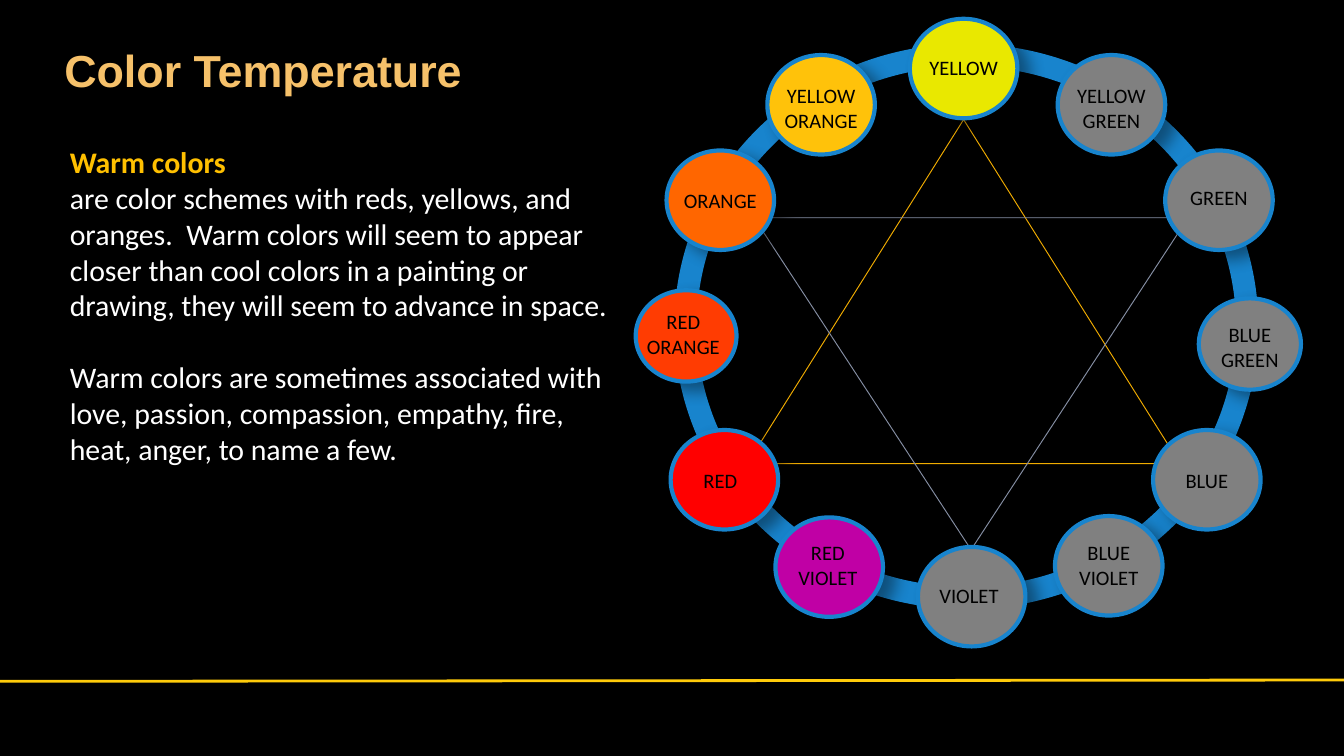
from dataclasses import dataclass

import pptx
import pptx.dml.color
import pptx.enum.shapes
import pptx.enum.text
import pptx.oxml
import pptx.oxml.ns
import pptx.util
from pptx.util import Inches

SHAPES = pptx.enum.shapes.MSO_SHAPE
RING_BLUE, GOLD, GRAY = "1884CD", "FFC000", "808080"
LABEL_WIDTH = 0.84
BODY_FORMAT = {"name": "Calibri", "size": pptx.util.Pt(16), "bold": False}
LABEL_FORMAT = {"name": "Calibri", "size": pptx.util.Pt(11)}
TITLE_FORMAT = {"name": "Arial", "size": pptx.util.Pt(24), "bold": True}


@dataclass
class Disc:
    label: str
    left: float
    top: float
    fill: str
    label_top: float
    width: float = 0.8
    height: float = 0.74
    label_shift: float = 0


@dataclass
class Triangle:
    left: float
    top: float
    width: float
    height: float
    color: str
    rotation: int = 0


@dataclass
class BodyParagraph:
    text: str
    color: str = "FFFFFF"
    bold: bool = False
    space_before: float = 0


DISCS = [
    Disc("YELLOW", 6.77, 0.14, "E9E800", 0.36),
    Disc("YELLOW GREEN", 7.87, 0.41, GRAY, 0.57),
    Disc("GREEN", 8.67, 1.12, GRAY, 1.33),
    Disc("BLUE GREEN", 8.92, 2.22, GRAY, 2.35, 0.76, 0.68),
    Disc("BLUE", 8.58, 3.2, GRAY, 3.43),
    Disc("BLUE VIOLET", 7.85, 3.84, GRAY, 3.97),
    Disc("VIOLET", 6.83, 4.07, GRAY, 4.29, label_shift=-0.02),
    Disc("RED VIOLET", 5.77, 3.85, "C000A5", 3.97, label_shift=-0.01),
    Disc("RED", 4.99, 3.2, "FF0000", 3.43, label_shift=-0.03),
    Disc("RED ORANGE", 4.73, 2.16, "FF3C02", 2.25, 0.75, 0.68, -0.02),
    Disc("ORANGE", 4.96, 1.12, "FF6600", 1.35),
    Disc("YELLOW ORANGE", 5.71, 0.41, "FFC20A", 0.57),
]
TRIANGLES = [
    Triangle(5.56, 0.89, 3.22, 2.56, "F0AC00"),
    Triangle(5.61, 1.62, 3.23, 2.47, "858EA3", 180),
]
BODY = [
    BodyParagraph("Warm colors", GOLD, True),
    BodyParagraph(
        "are color schemes with reds, yellows, and oranges.  Warm colors will seem to "
        "appear closer than cool colors in a painting or drawing, they will seem to "
        "advance in space."
    ),
    BodyParagraph(
        "Warm colors are sometimes associated with love, passion, compassion, empathy, fire,",
        space_before=19.2,
    ),
    BodyParagraph("heat, anger, to name a few."),
]


def rgb(color: str) -> pptx.dml.color.RGBColor:
    return pptx.dml.color.RGBColor.from_string(color)


def format_font(font, color: str, values: dict) -> None:
    for name, value in values.items():
        setattr(font, name, value)
    font.color.rgb = rgb(color)


def add_outline(slide, kind, left, top, width, height, color, weight):
    """Add a preset shape that has a line but no fill or shadow."""
    shape = slide.shapes.add_shape(
        kind, Inches(left), Inches(top), Inches(width), Inches(height)
    )
    shape.shadow.inherit = False
    shape.fill.background()
    shape.line.color.rgb = rgb(color)
    shape.line.width = pptx.util.Pt(weight)
    return shape


def add_text_frame(slide, left, top, width, height):
    box = slide.shapes.add_textbox(
        Inches(left), Inches(top), Inches(width), Inches(height)
    )
    box.text_frame.word_wrap = True
    return box.text_frame


def add_drop_shadow(shape) -> None:
    """Put a soft black shadow to the lower right of the shape."""
    effects = shape._element.spPr.find(pptx.oxml.ns.qn("a:effectLst"))
    effects.append(pptx.oxml.parse_xml(
        f'<a:outerShdw {pptx.oxml.ns.nsdecls("a")} blurRad="{pptx.util.Pt(8.8)}" '
        f'dist="{pptx.util.Pt(7)}" dir="{35 * 60000}" algn="tl" rotWithShape="0">'
        '<a:srgbClr val="000000"><a:alpha val="40000"/></a:srgbClr></a:outerShdw>'
    ))


def add_disc(slide, disc: Disc) -> None:
    shape = add_outline(slide, SHAPES.OVAL, disc.left, disc.top,
                        disc.width, disc.height, RING_BLUE, 2.25)
    shape.fill.solid()
    shape.fill.fore_color.rgb = rgb(disc.fill)
    add_drop_shadow(shape)

    label_left = disc.left + (disc.width - LABEL_WIDTH) / 2 + disc.label_shift
    label_height = 0.47 if " " in disc.label else 0.29
    frame = add_text_frame(slide, label_left, disc.label_top, LABEL_WIDTH, label_height)
    paragraph = frame.paragraphs[0]
    paragraph.text = disc.label
    paragraph.alignment = pptx.enum.text.PP_ALIGN.CENTER
    format_font(paragraph.font, "000000", LABEL_FORMAT)


def add_triangle(slide, triangle: Triangle) -> None:
    shape = add_outline(slide, SHAPES.FLOWCHART_EXTRACT, triangle.left, triangle.top,
                        triangle.width, triangle.height, triangle.color, 0.5)
    shape.rotation = triangle.rotation


def add_footer_line(slide) -> None:
    line = slide.shapes.add_connector(
        pptx.enum.shapes.MSO_CONNECTOR.STRAIGHT,
        Inches(0), Inches(5.07), Inches(10), Inches(5.06),
    )
    line.line.color.rgb = rgb("FFCB0A")
    line.line.width = pptx.util.Pt(1.5)
    line._element.spPr.append(pptx.oxml.parse_xml(
        f'<a:effectLst {pptx.oxml.ns.nsdecls("a")}/>'
    ))


def add_title(slide) -> None:
    paragraph = add_text_frame(slide, 0.38, 0.27, 3.68, 0.5).paragraphs[0]
    paragraph.text = "Color Temperature"
    format_font(paragraph.font, "F6C16A", TITLE_FORMAT)


def add_body(slide) -> None:
    frame = add_text_frame(slide, 0.29, 1.02, 4.43, 2.79)
    frame.margin_left = Inches(0.23)
    for index, item in enumerate(BODY):
        paragraph = frame.add_paragraph() if index else frame.paragraphs[0]
        paragraph.text = item.text
        if item.space_before:
            paragraph.space_before = pptx.util.Pt(item.space_before)
        format_font(paragraph.font, item.color, BODY_FORMAT | {"bold": item.bold})


def main() -> None:
    presentation = pptx.Presentation()
    presentation.slide_width = Inches(10)
    presentation.slide_height = Inches(10 * 9 / 16)
    slide = presentation.slides.add_slide(presentation.slide_layouts[6])
    slide.background.fill.solid()
    slide.background.fill.fore_color.rgb = rgb("000000")

    add_footer_line(slide)
    add_title(slide)
    add_body(slide)
    add_outline(slide, SHAPES.OVAL, 5.1, 0.41, 4.18, 4.04, RING_BLUE, 12)
    for triangle in TRIANGLES:
        add_triangle(slide, triangle)
    for disc in DISCS:
        add_disc(slide, disc)
    presentation.save("out.pptx")


if __name__ == "__main__":
    main()
